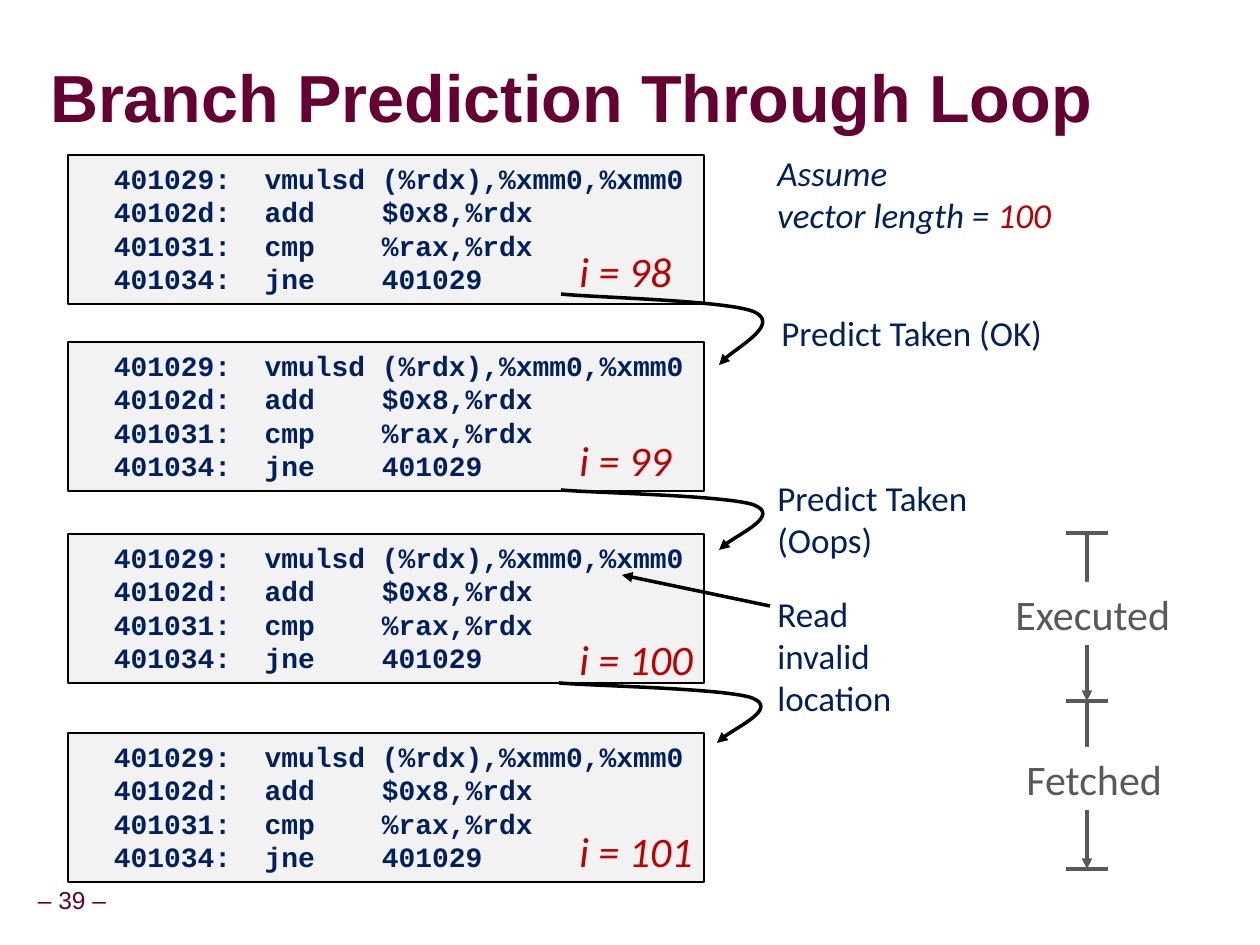
from lxml.etree import SubElement
from pptx import Presentation
from pptx.dml.color import RGBColor
from pptx.enum.shapes import MSO_CONNECTOR, MSO_SHAPE
from pptx.enum.text import MSO_ANCHOR, MSO_AUTO_SIZE, PP_ALIGN
from pptx.oxml.ns import qn
from pptx.util import Emu, Pt

COLORS = {
    "maroon": "660033", "navy": "002060", "red": "C00000", "gray": "595959",
    "panel": "F2F2F2", "black": "000000", "white": "FFFFFF",
}
TITLE = "Branch Prediction Through Loop"
PAGE_NUMBER = "– 39 –"
CODE = [
    "  401029:  vmulsd (%rdx),%xmm0,%xmm0",
    "  40102d:  add    $0x8,%rdx",
    "  401031:  cmp    %rax,%rdx",
    "  401034:  jne    401029",
]
ITERATIONS = [
    ("i = 98", 155, 239, 118),
    ("i = 99", 342, 428, 118),
    ("i = 100", 534, 627, 140),
    ("i = 101", 733, 819, 140),
]
JUMPS = [(561, 294, 71), (561, 490, 60), (559, 683, 60)]
JUMP_CURVE = [(33, 0.05), (166, 0.09), (193, 0.25), (219, 0.42), (165, 0.84), (158, 1)]
REMARKS = [
    (["Predict Taken (OK)"], (769, 305, 295, 55), False),
    (["Predict Taken", "(Oops)"], (765, 470, 222, 97), False),
    (["Read invalid location"], (765, 586, 179, 140), True),
]
ASSUMPTION = ["Assume", [("vector length = ", "navy"), ("100", "red")]]
STAGES = [("Executed", 1003, 582, 185), ("Fetched", 1014, 747, 164)]
STAGE_TICKS = [533, 701, 869]
STAGE_X, TICK_HALF = 1087, 21
BOX_LEFT, BOX_WIDTH, BOX_HEIGHT = 68, 636, 149
LABEL_HEIGHT = 63


def px(value):
    return Emu(round(value * 914400 / 126))


def color(name):
    return RGBColor.from_string(COLORS[name])


def write(shape, lines, size=20, ink="navy", font="Calibri", bold=False, italic=False,
          align=PP_ALIGN.LEFT, anchor=MSO_ANCHOR.TOP, wrap=False, spacing=None,
          inset=None, fit=MSO_AUTO_SIZE.SHAPE_TO_FIT_TEXT):
    frame = shape.text_frame
    frame.word_wrap = wrap
    frame.auto_size = fit
    frame.vertical_anchor = anchor
    if inset is not None:
        frame.margin_left = frame.margin_right = px(inset)
        frame.margin_top = frame.margin_bottom = px(inset)
    for index, line in enumerate(lines):
        paragraph = frame.add_paragraph() if index else frame.paragraphs[0]
        paragraph.alignment = align
        if spacing:
            paragraph.line_spacing = spacing
        for words, run_ink in [(line, ink)] if isinstance(line, str) else line:
            run = paragraph.add_run()
            run.text = words
            run.font.size = Pt(size)
            run.font.name = font
            run.font.bold = bold
            run.font.italic = italic
            run.font.color.rgb = color(run_ink)


def add_text(slide, lines, place, **style):
    write(slide.shapes.add_textbox(*map(px, place)), lines, **style)


def add_box(slide, place, fill, outline=None):
    box = slide.shapes.add_shape(MSO_SHAPE.RECTANGLE, *map(px, place))
    box.shadow.inherit = False
    box.fill.solid()
    box.fill.fore_color.rgb = color(fill)
    if outline:
        box.line.color.rgb = color(outline)
        box.line.width = Pt(0.75)
    else:
        box.line.fill.background()
    return box


def style_line(stroke, ink, arrow):
    stroke.line.color.rgb = color(ink)
    stroke.line.width = Pt(2)
    if arrow:
        SubElement(stroke.line._get_or_add_ln(), qn("a:tailEnd"), type="triangle")


def add_line(slide, start, end, ink, arrow=False):
    connector = slide.shapes.add_connector(
        MSO_CONNECTOR.STRAIGHT, *map(px, start + end))
    style_line(connector, ink, arrow)
    SubElement(connector._element.spPr, qn("a:effectLst"))


def add_jump(slide, left, top, height):
    points = [(px(left + dx), px(top + height * share)) for dx, share in JUMP_CURVE]
    builder = slide.shapes.build_freeform(px(left), px(top))
    builder.add_line_segments(points, close=False)
    jump = builder.convert_to_shape()
    segments = list(jump._element.iter(qn("a:lnTo")))
    outline = segments[0].getparent()
    for first in range(0, len(segments), 3):
        curve = SubElement(outline, qn("a:cubicBezTo"))
        for segment in segments[first:first + 3]:
            curve.append(segment[0])
            outline.remove(segment)
    jump.shadow.inherit = False
    jump.fill.background()
    style_line(jump, "black", arrow=True)


def main():
    presentation = Presentation()
    presentation.slide_width, presentation.slide_height = px(1260), px(945)
    slide = presentation.slides.add_slide(presentation.slide_layouts[5])

    title = slide.shapes.title
    title.left, title.top, title.width, title.height = map(px, (50, 62, 1082, 79))
    write(title, [TITLE], size=38, ink="maroon", font="Arial", bold=True, wrap=True,
          anchor=MSO_ANCHOR.MIDDLE, spacing=0.87, inset=0, fit=MSO_AUTO_SIZE.NONE)
    add_text(slide, [PAGE_NUMBER], (-12, 882, 168, 39), size=14, ink="maroon",
             font="Arial", align=PP_ALIGN.CENTER, anchor=MSO_ANCHOR.MIDDLE,
             spacing=0.9, inset=6)

    for counter, top, counter_top, counter_width in ITERATIONS:
        box = add_box(slide, (BOX_LEFT, top, BOX_WIDTH, BOX_HEIGHT), "panel", "black")
        write(box, CODE, size=16, font="Courier New", bold=True)
        add_text(slide, [counter], (567, counter_top, counter_width, LABEL_HEIGHT),
                 size=24, ink="red", italic=True)
    for jump in JUMPS:
        add_jump(slide, *jump)

    add_text(slide, ASSUMPTION, (765, 145, 306, 97), italic=True)
    for lines, place, wrap in REMARKS:
        add_text(slide, lines, place, wrap=wrap)
    add_line(slide, (770, 606), (622, 575), "black", arrow=True)

    for start, end in zip(STAGE_TICKS, STAGE_TICKS[1:]):
        add_line(slide, (STAGE_X, start), (STAGE_X, end), "gray", arrow=True)
    for stage, left, top, width in STAGES:
        label = add_box(slide, (left, top, width, LABEL_HEIGHT), "white")
        write(label, [stage], size=24, ink="gray")
    for tick in STAGE_TICKS:
        add_line(slide, (STAGE_X - TICK_HALF, tick), (STAGE_X + TICK_HALF, tick), "gray")

    presentation.save("out.pptx")


if __name__ == "__main__":
    main()
